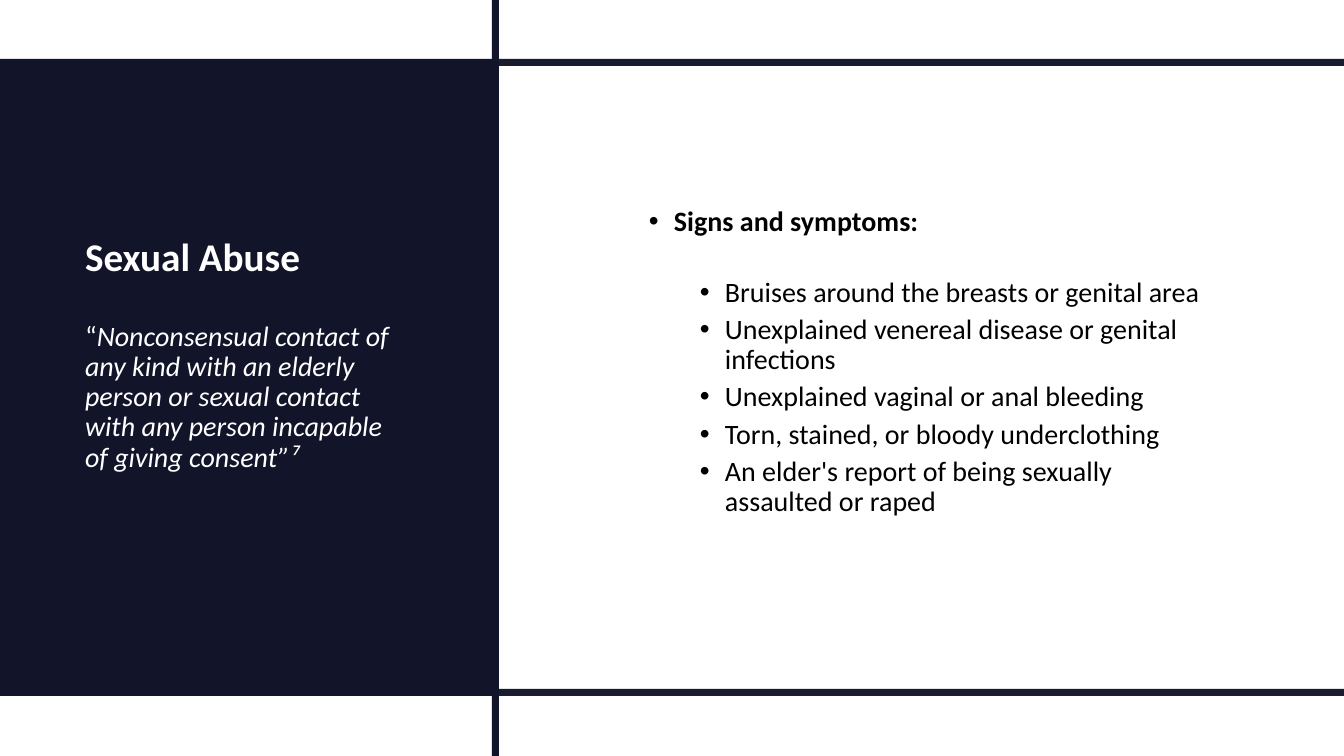
import lxml.etree
import pptx
import pptx.dml.color
import pptx.enum.shapes
import pptx.enum.text
import pptx.oxml.ns
import pptx.util

PX = 914400 / 100.8
PAGE_W, PAGE_H = 1344, 756
NAVY, WHITE, BLACK = "121429", "FFFFFF", "000000"
RULE = 7
BAND_TOP, BAND_H, PANEL_W = 59, 637, 499

SYMPTOMS = [
    "Bruises around the breasts or genital area",
    "Unexplained venereal disease or genital infections",
    "Unexplained vaginal or anal bleeding",
    "Torn, stained, or bloody underclothing",
    "An elder's report of being sexually assaulted or raped",
]


def emu(px):
    return pptx.util.Emu(round(px * PX))


def color(code):
    return pptx.dml.color.RGBColor.from_string(code)


def apply(target, values):
    for name, value in values.items():
        setattr(target, name, value)


def place(shape, box):
    apply(shape, dict(zip(("left", "top", "width", "height"), map(emu, box))))


def add_block(page, box, alpha=None):
    """Plain navy rectangle, optionally see-through."""
    block = page.shapes.add_shape(
        pptx.enum.shapes.MSO_SHAPE.RECTANGLE, *map(emu, box))
    block.shadow.inherit = False
    block.fill.solid()
    block.fill.fore_color.rgb = color(NAVY)
    block.line.fill.background()
    if alpha is not None:
        tint = block.element.spPr.find(".//" + pptx.oxml.ns.qn("a:srgbClr"))
        lxml.etree.SubElement(
            tint, pptx.oxml.ns.qn("a:alpha"), val=str(alpha * 1000))
    return block


def set_frame(frame, bottom):
    apply(frame, {
        "word_wrap": True,
        "auto_size": pptx.enum.text.MSO_AUTO_SIZE.NONE,
        "vertical_anchor": pptx.enum.text.MSO_ANCHOR.MIDDLE,
        "margin_left": emu(10), "margin_right": emu(10),
        "margin_top": emu(5), "margin_bottom": emu(bottom),
    })


def set_para(para, before):
    apply(para, {
        "alignment": pptx.enum.text.PP_ALIGN.LEFT,
        "line_spacing": 0.9,
        "space_before": pptx.util.Pt(before),
        "space_after": pptx.util.Pt(0),
    })


def add_span(para, text, size, code, bold=False, italic=False):
    span = para.add_run()
    span.text = text
    apply(span.font, {"name": "Calibri", "size": pptx.util.Pt(size),
                      "bold": bold, "italic": italic})
    span.font.color.rgb = color(code)


def add_bullet(para, indent):
    props = para._p.get_or_add_pPr()
    props.set("marL", str(emu(indent)))
    props.set("indent", str(-emu(25)))
    for tag, key, value in (("a:buFont", "typeface", "Arial"),
                            ("a:buChar", "char", "•")):
        lxml.etree.SubElement(props, pptx.oxml.ns.qn(tag)).set(key, value)


def build_definition(page, box):
    """Dark panel with the heading and its definition."""
    left, top, width, height = box
    panel = add_block(page, box)
    title = page.shapes.title
    panel.element.addnext(title.element)
    place(title, (left + 75, top + 101, width - 157, height - 203))
    frame = title.text_frame
    set_frame(frame, 48)
    heading = frame.paragraphs[0]
    set_para(heading, 0)
    add_span(heading, "Sexual Abuse", 28, WHITE, bold=True)
    quote = frame.add_paragraph()
    set_para(quote, 30)
    add_span(quote, "“", 20, WHITE)
    add_span(quote, "Nonconsensual contact of any kind with an elderly person "
             "or sexual contact with any person incapable of giving consent”⁷",
             20, WHITE, italic=True)


def build_symptoms(page, box):
    """Bulleted list of signs."""
    left, top, width, height = box
    body = page.shapes.add_textbox(*map(
        emu, (left + 140, top + 101, width - 256, height - 203)))
    frame = body.text_frame
    set_frame(frame, 34)
    heading = frame.paragraphs[0]
    set_para(heading, 10)
    add_bullet(heading, 25)
    add_span(heading, "Signs and symptoms:", 20, BLACK, bold=True)
    for index, symptom in enumerate(SYMPTOMS):
        para = frame.add_paragraph()
        para.level = 1
        set_para(para, 5 if index else 29)
        add_bullet(para, 76)
        add_span(para, symptom, 20, BLACK)


def build_rules(page):
    """Two horizontal rules and the vertical one that crosses them."""
    for top in (BAND_TOP, BAND_TOP + BAND_H - RULE):
        add_block(page, (0, top, PAGE_W, RULE), alpha=97)
    add_block(page, (PANEL_W - RULE, 0, RULE, PAGE_H))


def main():
    deck = pptx.Presentation()
    deck.slide_width, deck.slide_height = emu(PAGE_W), emu(PAGE_H)
    page = deck.slides.add_slide(deck.slide_layouts.get_by_name("Title Only"))
    page.background.fill.solid()
    page.background.fill.fore_color.rgb = color(WHITE)
    build_definition(page, (0, BAND_TOP, PANEL_W, BAND_H))
    build_symptoms(page, (PANEL_W, BAND_TOP, PAGE_W - PANEL_W, BAND_H))
    build_rules(page)
    deck.save("out.pptx")


if __name__ == "__main__":
    main()
